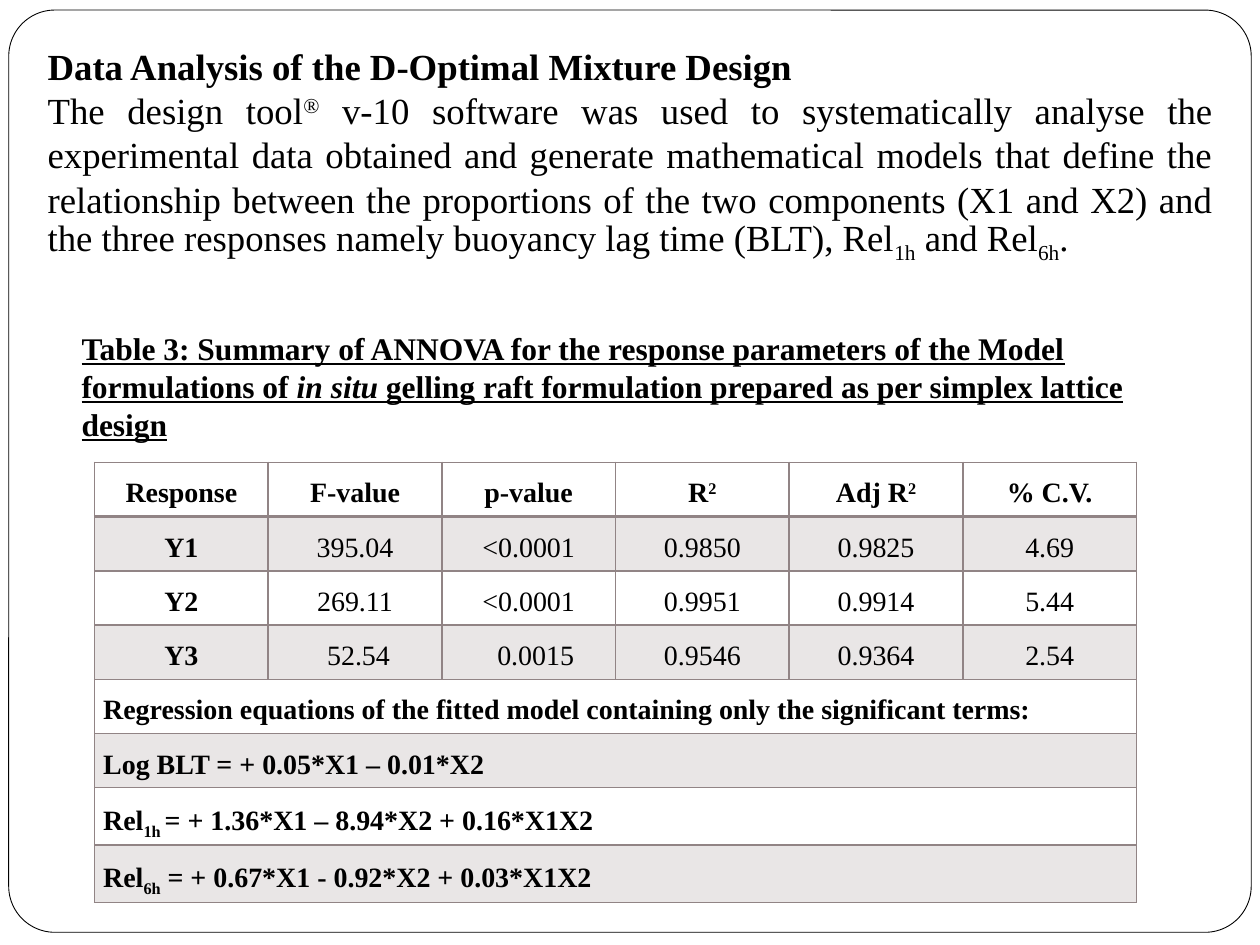
from lxml import etree
from pptx import Presentation
from pptx.dml.color import RGBColor
from pptx.enum.shapes import MSO_SHAPE
from pptx.enum.text import MSO_ANCHOR, MSO_AUTO_SIZE, PP_ALIGN
from pptx.oxml.ns import qn
from pptx.util import Pt

ROUND_RECT = MSO_SHAPE.ROUNDED_RECTANGLE
TOP, MIDDLE = MSO_ANCHOR.TOP, MSO_ANCHOR.MIDDLE
NO_FIT = MSO_AUTO_SIZE.NONE
LEFT, CENTER, JUSTIFY = PP_ALIGN.LEFT, PP_ALIGN.CENTER, PP_ALIGN.JUSTIFY

FONT = "Times New Roman"
BLACK, WHITE, GRAY = "000000", "FFFFFF", "918485"
SUP, SUB = 30000, -25000
COL_W, ROW_H = 99.25, 31

HEADING = "Data Analysis of the D-Optimal Mixture Design"
INTRO = [
    ("The design tool", 0), ("®", SUP),
    (" v-10 software was used to systematically analyse the experimental data "
     "obtained and generate mathematical models that define the relationship "
     "between the proportions of the two components (X1 and X2) and the three "
     "responses namely buoyancy lag time (BLT), Rel", 0),
    ("1h", SUB), (" and Rel", 0), ("6h", SUB), (".", 0),
]
CAPTION = [
    ("Table 3: Summary of ANNOVA for the response parameters of the Model "
     "formulations of ", False),
    ("in situ", True),
    (" gelling raft formulation prepared as per simplex lattice design", False),
]
HEADERS = [
    [("Response", 0)], [("F-value", 0)], [("p-value", 0)],
    [("R", 0), ("2", SUP)], [("Adj R", 0), ("2", SUP)], [("% C.V.", 0)],
]
RESULTS = [
    ["Y1", "395.04", "<0.0001", "0.9850", "0.9825", "4.69"],
    ["Y2", "269.11", "<0.0001", "0.9951", "0.9914", "5.44"],
    ["Y3", "52.54", "0.0015", "0.9546", "0.9364", "2.54"],
]
EQUATIONS = [
    [("Regression equations of the fitted model containing only the "
      "significant terms:", 0)],
    [("Log BLT = + 0.05*X1 – 0.01*X2", 0)],
    [("Rel", 0), ("1h ", SUB), ("= + 1.36*X1 – 8.94*X2 + 0.16*X1X2", 0)],
    [("Rel", 0), ("6h", SUB), (" = + 0.67*X1 - 0.92*X2 + 0.03*X1X2", 0)],
]
INDENTS = {(3, 1): 4, (3, 2): 8}


def rgb(value):
    """Turn a hex string into a colour."""
    return RGBColor.from_string(value)


def place(sp, left, top, width, height):
    """Move and size a shape, in points."""
    sp.left, sp.top, sp.width, sp.height = map(Pt, (left, top, width, height))


def style(p, size, bold=False, align=LEFT, spacing=None):
    """Format a whole paragraph."""
    p.alignment, p.line_spacing = align, spacing
    p.space_before = p.space_after = Pt(0)
    p.font.name, p.font.size, p.font.bold = FONT, Pt(size), bold
    p.font.color.rgb = rgb(BLACK)


def add_runs(p, parts):
    """Add text runs with their baseline shifts."""
    for text, baseline in parts:
        r = p.add_run()
        r.text = text
        if baseline:
            r._r.get_or_add_rPr().set("baseline", str(baseline))


def add_frame(s):
    """Add the rounded page frame behind the title."""
    sp = s.shapes.add_shape(ROUND_RECT, Pt(5), Pt(5.75), Pt(710), Pt(527))
    sp.adjustments[0] = 0.05
    sp.shadow.inherit = False
    sp.fill.solid()
    sp.fill.fore_color.rgb = rgb(WHITE)
    sp.line.color.rgb = rgb(BLACK)
    sp.line.width = Pt(0.5)
    s.shapes.title.element.addprevious(sp.element)


def fill_placeholder(sp, box, parts, bold, align):
    """Place a placeholder and give it one unbulleted paragraph."""
    place(sp, *box)
    tf = sp.text_frame
    tf.auto_size, tf.vertical_anchor, tf.word_wrap = NO_FIT, TOP, True
    tf.margin_bottom = 0
    p = tf.paragraphs[0]
    style(p, 21, bold, align, Pt(25.3))
    pPr = p._p.get_or_add_pPr()
    pPr.set("marL", "0")
    pPr.set("indent", "0")
    bullet = etree.Element(qn("a:buNone"))
    pPr.find(qn("a:defRPr")).addprevious(bullet)
    add_runs(p, parts)


def add_caption(s):
    """Add the underlined table caption."""
    sp = s.shapes.add_textbox(Pt(39.5), Pt(140.5), Pt(655), Pt(138))
    tf = sp.text_frame
    tf.word_wrap, tf.vertical_anchor = True, MIDDLE
    tf.margin_top = Pt(25.4)
    p = tf.paragraphs[0]
    style(p, 18, True, spacing=Pt(21.7))
    p.font.underline = True
    for text, italic in CAPTION:
        r = p.add_run()
        r.text = text
        r.font.italic = italic
        r.font.underline = True


def set_borders(cell, top, bottom):
    """Draw the four cell borders."""
    tcPr = cell._tc.get_or_add_tcPr()
    for i, (side, width) in enumerate(
            (("L", 1), ("R", 1), ("T", top), ("B", bottom))):
        ln = etree.Element(qn(f"a:ln{side}"), w=str(Pt(width)))
        fill = etree.SubElement(ln, qn("a:solidFill"))
        etree.SubElement(fill, qn("a:srgbClr"), val=GRAY)
        tcPr.insert(i, ln)


def format_cell(cell, row):
    """Set the margins, band fill and borders of a cell."""
    cell.margin_left = cell.margin_right = Pt(5)
    cell.margin_top = cell.margin_bottom = 0
    if row % 2:
        cell.fill.solid()
        cell.fill.fore_color.rgb = rgb(GRAY)
        clr = cell._tc.tcPr.find(".//" + qn("a:srgbClr"))
        etree.SubElement(clr, qn("a:alpha"), val="20000")
    else:
        cell.fill.background()
    set_borders(cell, 2 if row == 1 else 1, 2 if row == 0 else 1)


def write_cell(cell, parts, bold, align):
    """Write one paragraph into a cell."""
    p = cell.text_frame.paragraphs[0]
    style(p, 16, bold, align, 1.5)
    add_runs(p, parts)


def add_results_table(s):
    """Add the table of responses and fitted equations."""
    grid = [HEADERS] + [[[(text, 0)] for text in row] for row in RESULTS]
    rows, cols = len(grid) + len(EQUATIONS), len(HEADERS)
    table = s.shapes.add_table(rows, cols, Pt(54), Pt(264.25),
                               Pt(COL_W * cols), Pt(ROW_H * rows)).table
    table.first_row = table.horz_banding = False
    for col in table.columns:
        col.width = Pt(COL_W)
    for i, row in enumerate(table.rows):
        row.height = Pt(ROW_H)
        for cell in row.cells:
            format_cell(cell, i)
    for i, row in enumerate(grid):
        for j, parts in enumerate(row):
            write_cell(table.cell(i, j), parts, i == 0 or j == 0, CENTER)
    for (i, j), indent in INDENTS.items():
        table.cell(i, j).margin_left = Pt(5 + indent)
    for i, parts in enumerate(EQUATIONS, len(grid)):
        table.cell(i, 0).merge(table.cell(i, cols - 1))
        write_cell(table.cell(i, 0), parts, True, JUSTIFY)


def main():
    """Build and save the slide."""
    prs = Presentation()
    prs.slide_width, prs.slide_height = Pt(720), Pt(540)
    s = prs.slides.add_slide(prs.slide_layouts[1])
    add_frame(s)
    fill_placeholder(s.shapes.title, (20, 21, 680.5, 29),
                     [(HEADING, 0)], True, LEFT)
    body = s.placeholders[1]
    fill_placeholder(body, (20, 50, 680.5, 105.5), INTRO, False, JUSTIFY)
    body.text_frame.margin_top = 0
    add_caption(s)
    add_results_table(s)
    prs.save("out.pptx")


if __name__ == "__main__":
    main()
